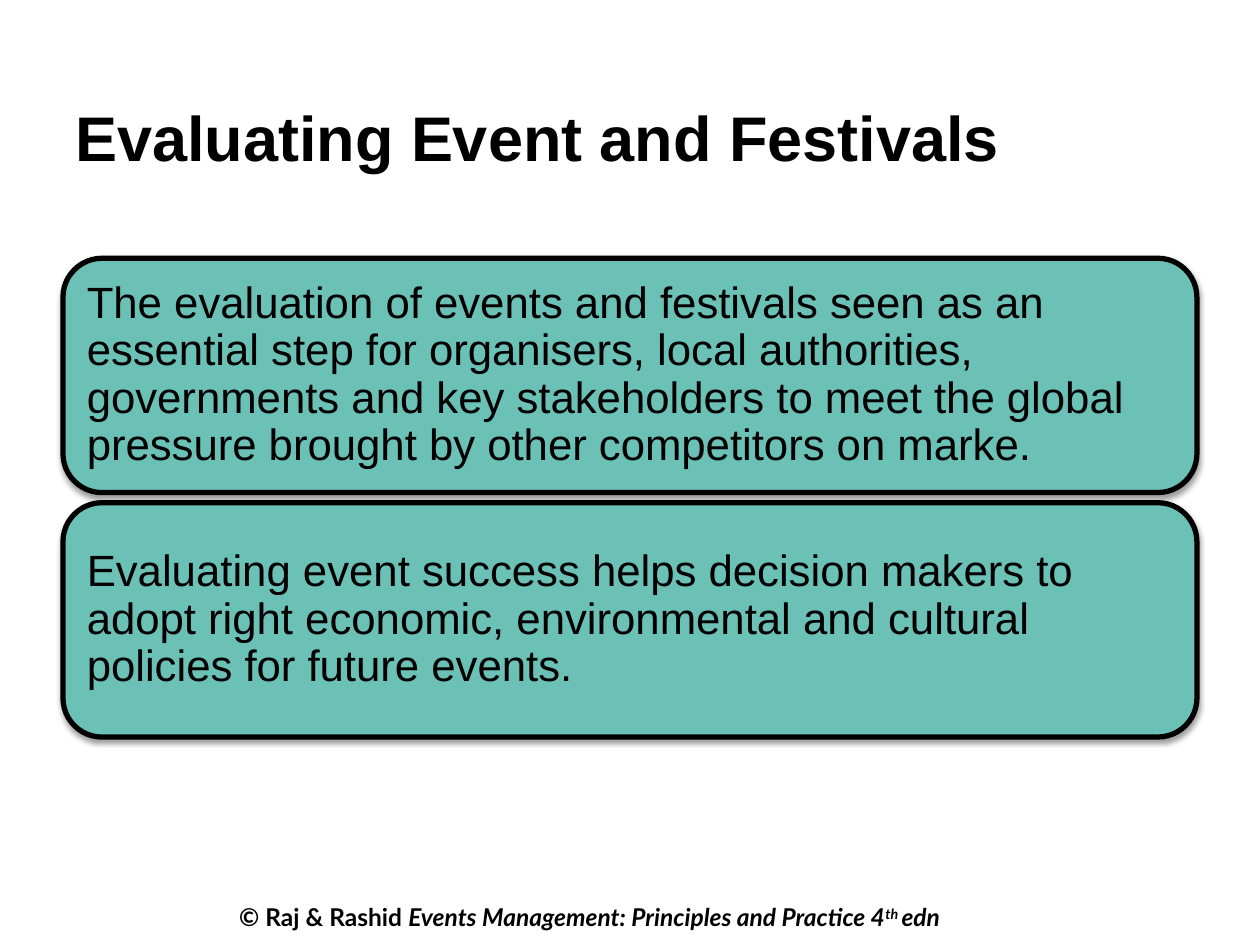
from dataclasses import dataclass

from lxml import etree
from pptx import Presentation
from pptx.dml.color import RGBColor
from pptx.enum.shapes import MSO_SHAPE as Shape
from pptx.enum.text import MSO_ANCHOR as Anchor, PP_ALIGN as Align
from pptx.oxml import parse_xml
from pptx.oxml.ns import nsdecls, qn
from pptx.util import Inches, Pt


@dataclass(frozen=True)
class Theme:
    ink: RGBColor = RGBColor(0, 0, 0)
    panel: RGBColor = RGBColor(0x6B, 0xC1, 0xB6)
    font: str = "Arial"
    footer_font: str = "Lato"
    title_size: Pt = Pt(36)
    body_size: Pt = Pt(25)
    footer_size: Pt = Pt(14)


theme = Theme()


def add_run(paragraph, text, **formats):
    run = paragraph.add_run()
    run.text = text
    run.font.color.rgb = theme.ink
    for name, value in formats.items():
        setattr(run.font, name, value)
    return run


def add_shadow(shape):
    """Give the shape a soft black shadow straight below it."""
    shape.shadow.inherit = False
    effects = shape._element.spPr.find(qn("a:effectLst"))
    effects.append(parse_xml(
        f'<a:outerShdw {nsdecls("a")} blurRad="{Pt(3.1)}" dist="{Pt(1.6)}" '
        'dir="5400000" rotWithShape="0"><a:srgbClr val="000000">'
        '<a:alpha val="38000"/></a:srgbClr></a:outerShdw>'))


presentation = Presentation()
presentation.slide_width, presentation.slide_height = Inches(10), Inches(7.5)
slide = presentation.slides.add_slide(presentation.slide_layouts[6])
left, width = Inches(0.5), Inches(9)

# Footer
footer = slide.shapes.add_textbox(Inches(1.8), Inches(7.11), Inches(6.97), Inches(0.34))
footer.text_frame.word_wrap = True
paragraph = footer.text_frame.paragraphs[0]
footer_format = {"name": theme.footer_font, "size": theme.footer_size, "bold": True}
add_run(paragraph, "© Raj & Rashid ", **footer_format)
footer_format["italic"] = True
add_run(paragraph, "Events Management: Principles and Practice 4", **footer_format)
ordinal = add_run(paragraph, "th ", **footer_format)
ordinal.font._element.set("baseline", "30000")
add_run(paragraph, "edn", **footer_format)

# Title
title = slide.shapes.add_textbox(left, Inches(0.73), width, Inches(1.05))
title.text_frame.word_wrap = True
add_run(title.text_frame.paragraphs[0], "Evaluating Event and Festivals",
        name=theme.font, size=theme.title_size, bold=True)

# Stacked panels
statements = [
    "The evaluation of events and festivals seen as an essential step for organisers, "
    "local authorities, governments and key stakeholders to meet the global pressure "
    "brought by other competitors on marke.",
    "Evaluating event success helps decision makers to adopt right economic, "
    "environmental and cultural policies for future events.",
]
panel_top, panel_height, panel_gap = Inches(2.05), Inches(1.86), Inches(0.08)
inset = Inches(0.1)
frame_format = {
    "word_wrap": True, "vertical_anchor": Anchor.MIDDLE,
    "margin_left": inset, "margin_right": inset,
    "margin_top": inset, "margin_bottom": inset,
}
for index, statement in enumerate(statements):
    top = panel_top + index * (panel_height + panel_gap)
    panel = slide.shapes.add_shape(Shape.ROUNDED_RECTANGLE, left, top, width, panel_height)
    panel.fill.solid()
    panel.fill.fore_color.rgb = theme.panel
    panel.line.color.rgb = theme.ink
    panel.line.width = Pt(3)
    add_shadow(panel)
    for name, value in frame_format.items():
        setattr(panel.text_frame, name, value)
    paragraph = panel.text_frame.paragraphs[0]
    paragraph.alignment = Align.LEFT
    paragraph.line_spacing = 0.9
    add_run(paragraph, statement, name=theme.font, size=theme.body_size)

presentation.save("out.pptx")
